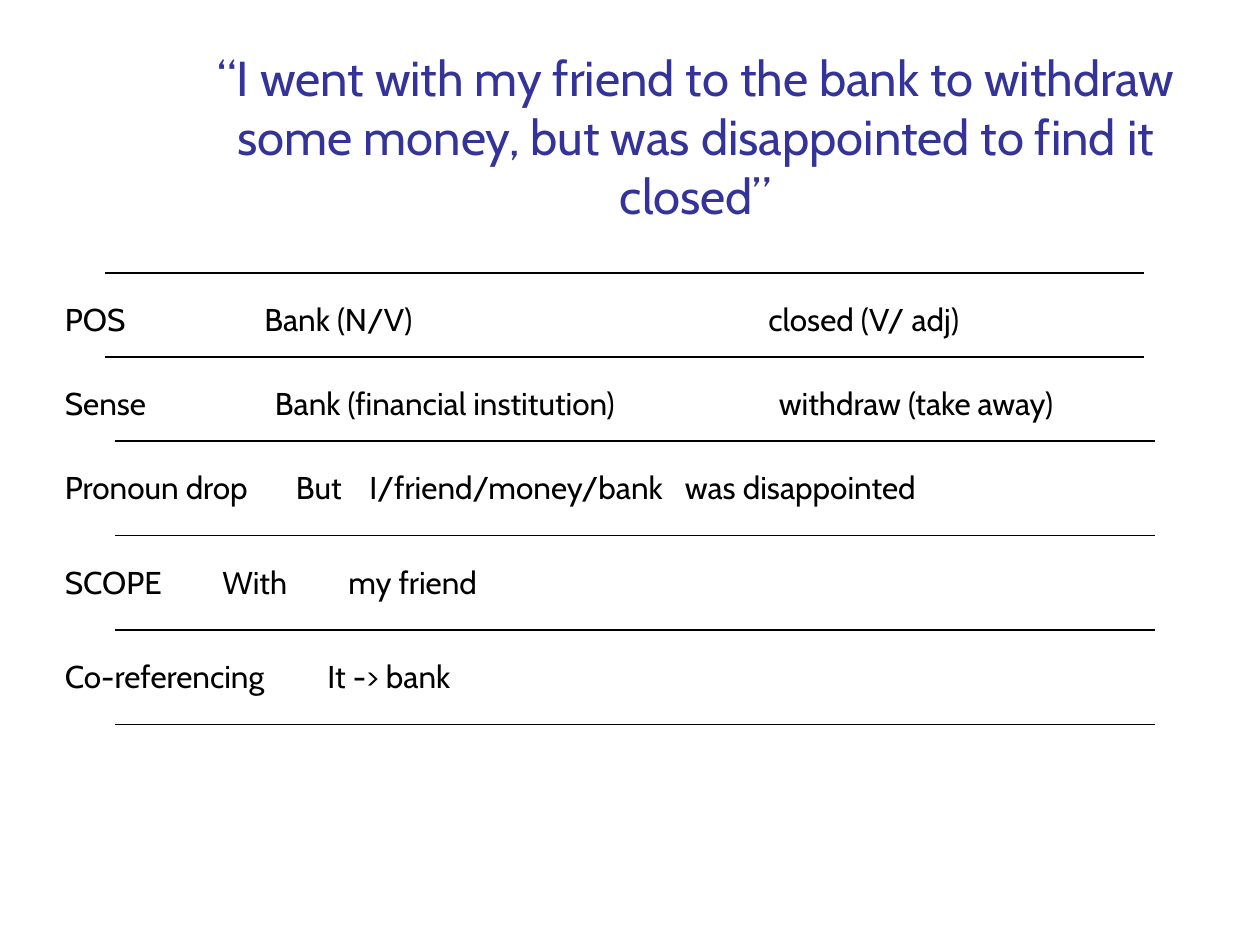
import pptx
import pptx.util
import pptx.dml.color
import pptx.enum.shapes
import pptx.enum.text
import pptx.oxml.ns
from lxml import etree

Pt = pptx.util.Pt
ANCHOR = pptx.enum.text.MSO_ANCHOR
ALIGN = pptx.enum.text.PP_ALIGN

SENTENCE = ("“I went with my friend to the bank to withdraw some money, "
            "but was disappointed to find it closed”")
ANALYSES = [
    {"level": "POS", "width": 54, "left": 144, "finding_width": 474,
     "finding": "Bank (N/V)\tclosed (V/ adj)", "stops": [288]},
    {"level": "Sense", "width": 72, "left": 150, "finding_width": 486,
     "finding": "Bank (financial institution)\twithdraw (take away)", "stops": [288]},
    {"level": "Pronoun drop", "width": 126, "left": 162, "finding_width": 444,
     "finding": "But\tI/friend/money/bank\twas disappointed", "stops": [42, 222.3]},
    {"level": "SCOPE", "width": 108, "left": 120, "finding_width": 522,
     "finding": "With\tmy friend", "stops": [72]},
    {"level": "Co-referencing", "width": 132, "left": 180, "finding_width": 180,
     "finding": "It -> bank", "stops": []},
]
RULES = [(60, 156), (60, 204), (66, 252), (66, 306), (66, 360), (66, 414)]
RULE_LENGTH = 594
TEXT_DROP = 12
LEVEL_LEFT = 30
ROW_HEIGHT = 29


def color(value):
    return pptx.dml.color.RGBColor.from_string(value)


def add_text(slide, text, left, top, width, height, size=18, ink="000000",
             anchor=ANCHOR.TOP, align=ALIGN.LEFT, stops=()):
    frame = slide.shapes.add_textbox(Pt(left), Pt(top), Pt(width), Pt(height)).text_frame
    frame.word_wrap = True
    frame.vertical_anchor = anchor
    paragraph = frame.paragraphs[0]
    paragraph.text = text
    paragraph.alignment = align
    paragraph.font.name = "Cabin"
    paragraph.font.size = Pt(size)
    paragraph.font.color.rgb = color(ink)
    if stops:
        qn = pptx.oxml.ns.qn
        tabs = etree.Element(qn("a:tabLst"))
        for stop in stops:
            etree.SubElement(tabs, qn("a:tab"), pos=str(int(Pt(stop))), algn="l")
        paragraph._p.get_or_add_pPr().insert(0, tabs)


def add_rule(slide, left, top):
    rule = slide.shapes.add_connector(
        pptx.enum.shapes.MSO_CONNECTOR.STRAIGHT,
        Pt(left), Pt(top), Pt(left + RULE_LENGTH), Pt(top))
    rule.line.color.rgb = color("000000")
    rule.line.width = Pt(0.75)
    etree.SubElement(rule._element.spPr, pptx.oxml.ns.qn("a:effectLst"))


def main():
    deck = pptx.Presentation()
    deck.slide_width, deck.slide_height = Pt(720), Pt(540)
    slide = deck.slides.add_slide(deck.slide_layouts[6])

    add_text(slide, SENTENCE, 90.7, 16.5, 613.5, 115, 28, "333399",
             ANCHOR.BOTTOM, ALIGN.CENTER)
    for left, top in RULES:
        add_rule(slide, left, top)
    for row, (_, rule_top) in zip(ANALYSES, RULES):
        top = rule_top + TEXT_DROP
        add_text(slide, row["level"], LEVEL_LEFT, top, row["width"], ROW_HEIGHT)
        add_text(slide, row["finding"], row["left"], top, row["finding_width"],
                 ROW_HEIGHT, stops=row["stops"])

    deck.save("out.pptx")


if __name__ == "__main__":
    main()
